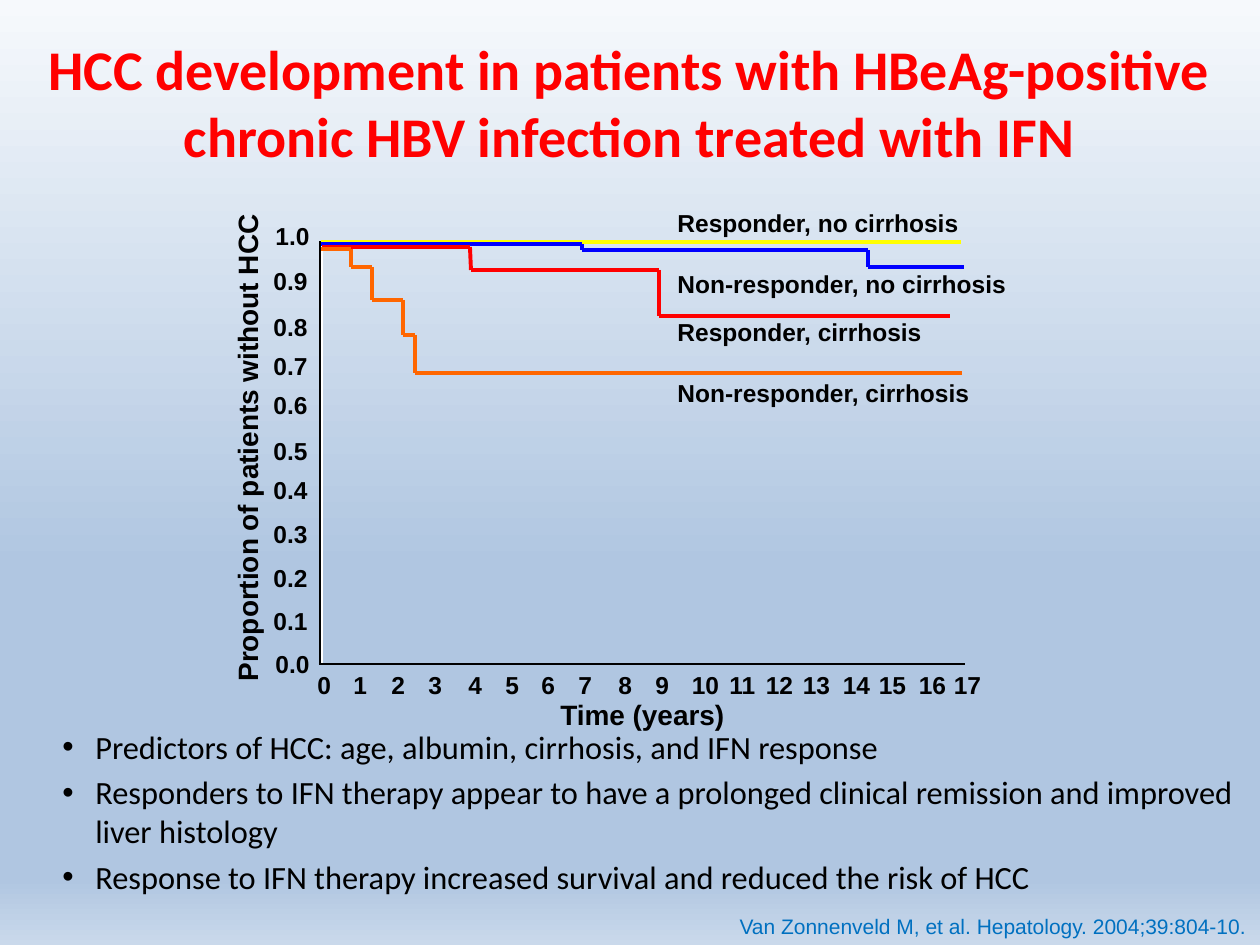
import itertools
from dataclasses import dataclass

import pptx
import pptx.dml.color
import pptx.enum.shapes
import pptx.enum.text
import pptx.oxml
import pptx.oxml.ns
import pptx.util

PX = 914400 / 126
ALIGN = pptx.enum.text.PP_ALIGN
NAMESPACE = pptx.oxml.ns.nsdecls("a")


@dataclass(frozen=True)
class Theme:
    heading_font: str = "Calibri"
    chart_font: str = "Arial"
    title: str = "FF0000"
    text: str = "000000"
    source: str = "0070C0"
    axis: str = "000000"
    axis_highlight: str = "FFFFFF"
    title_size: float = 32
    bullet_size: float = 18.5
    axis_title_size: float = 16
    label_size: float = 14
    source_size: float = 12
    axis_width: float = 0.75
    curve_width: float = 2.25
    background: tuple = ((0, "F6F9FC"), (60, "B0C6E1"), (93, "B0C6E1"), (100, "CAD9EB"))


THEME = Theme()

TITLE = "HCC development in patients with HBeAg-positive chronic HBV infection treated with IFN"
BULLETS = [
    "Predictors of HCC: age, albumin, cirrhosis, and IFN response",
    "Responders to IFN therapy appear to have a prolonged clinical remission and improved liver histology",
    "Response to IFN therapy increased survival and reduced the risk of HCC",
]
SOURCE = "Van Zonnenveld M, et al. Hepatology. 2004;39:804-10."

# Left edge of each year label, 0 to 17
YEAR_LEFTS = [305, 341, 379, 416, 456, 493, 529, 566, 606,
              643, 679, 716, 753, 790, 830, 866, 906, 941]
# Top edge of each proportion label, 0.0 to 1.0
PROPORTION_TOPS = [643, 600, 557, 513, 469, 430, 384, 345, 306, 260, 215]

# Label, label top, label width, colour, corners of the stepped curve
CURVES = [
    ("Responder, no cirrhosis", 202, 307, "FFFF00", [(321, 242), (961, 242)]),
    ("Non-responder, no cirrhosis", 263, 355, "0000FF",
     [(321, 244), (582, 244), (582, 250), (868, 250), (868, 267), (964, 267)]),
    ("Responder, cirrhosis", 311, 271, "FF0000",
     [(322, 247), (470, 247), (471, 270), (659, 270), (659, 316), (950, 316)]),
    ("Non-responder, cirrhosis", 372, 319, "FF6600",
     [(321, 249), (351, 249), (351, 267), (372, 267), (372, 300), (403, 300),
      (403, 335), (415, 335), (415, 373), (962, 373)]),
]
HIGHLIGHT_LINES = [((322, 241), (322, 664)), ((320, 664), (965, 664))]
AXIS_LINES = [((320, 241), (320, 663)), ((319, 664), (965, 664))]


def emu(pixels):
    return pptx.util.Emu(round(pixels * PX))


def add_text(slide, frame, lines, size, font=THEME.chart_font, color=THEME.text,
             bold=True, align=ALIGN.LEFT, wrap=False, bullet=False):
    box = slide.shapes.add_textbox(*map(emu, frame))
    box.text_frame.word_wrap = wrap
    for index, line in enumerate(lines):
        para = box.text_frame.paragraphs[0] if index == 0 else box.text_frame.add_paragraph()
        para.alignment = align
        if bullet:
            add_bullet(para)
            if index:
                para.space_before = pptx.util.Pt(0.2 * size)
        span = para.add_run()
        span.text = line
        span.font.name = font
        span.font.size = pptx.util.Pt(size)
        span.font.bold = bold
        span.font.color.rgb = pptx.dml.color.RGBColor.from_string(color)
    return box


def add_bullet(para):
    properties = para._p.get_or_add_pPr()
    properties.set("marL", str(emu(33)))
    properties.set("indent", str(emu(-33)))
    for mark in ('<a:buFont %s typeface="Arial"/>', '<a:buChar %s char="•"/>'):
        properties.append(pptx.oxml.parse_xml(mark % NAMESPACE))


def add_lines(slide, segments, color, width):
    for start, end in segments:
        line = slide.shapes.add_connector(
            pptx.enum.shapes.MSO_CONNECTOR.STRAIGHT, *map(emu, (*start, *end)))
        line.line.color.rgb = pptx.dml.color.RGBColor.from_string(color)
        line.line.width = pptx.util.Pt(width)
        line._element.spPr.append(pptx.oxml.parse_xml(f"<a:effectLst {NAMESPACE}/>"))


def set_background(slide):
    fill = slide.background.fill
    fill.gradient()
    fill.gradient_angle = 270
    stops = slide.element.xpath(".//p:bg//a:gsLst")[0]
    for stop in list(stops):
        stops.remove(stop)
    for percent, color in THEME.background:
        stops.append(pptx.oxml.parse_xml(
            f'<a:gs {NAMESPACE} pos="{percent * 1000}"><a:srgbClr val="{color}"/></a:gs>'))


def add_axis_labels(slide):
    for year, left in enumerate(YEAR_LEFTS):
        width, align = (39, ALIGN.LEFT) if year < 10 else (53, ALIGN.CENTER)
        add_text(slide, (left, 664, width, 43), [str(year)], THEME.label_size, align=align)
    for tenth, top in enumerate(PROPORTION_TOPS):
        left = 263 if tenth in (0, 10) else 261
        add_text(slide, (left, top, 59, 43), [f"{tenth / 10:.1f}"],
                 THEME.label_size, align=ALIGN.RIGHT)
    add_text(slide, (548, 691, 191, 47), ["Time (years)"], THEME.axis_title_size)
    axis_title = add_text(slide, (-2, 421, 499, 47),
                          ["Proportion of patients without HCC"], THEME.axis_title_size)
    axis_title.rotation = 270


def main():
    deck = pptx.Presentation()
    deck.slide_width, deck.slide_height = emu(1260), emu(945)
    page = deck.slides.add_slide(deck.slide_layouts[6])
    set_background(page)

    add_lines(page, HIGHLIGHT_LINES, THEME.axis_highlight, THEME.axis_width)
    add_axis_labels(page)
    for label, top, width, color, corners in CURVES:
        add_lines(page, itertools.pairwise(corners), color, THEME.curve_width)
        add_text(page, (665, top, width, 43), [label], THEME.label_size)

    add_text(page, (723, 907, 536, 38), [SOURCE], THEME.source_size,
             color=THEME.source, bold=False, align=ALIGN.RIGHT)
    title = add_text(page, (0, 8, 1259, 188), [TITLE], THEME.title_size,
                     font=THEME.heading_font, color=THEME.title,
                     align=ALIGN.CENTER, wrap=True)
    title.text_frame.vertical_anchor = pptx.enum.text.MSO_ANCHOR.MIDDLE
    add_text(page, (50, 721, 1196, 180), BULLETS, THEME.bullet_size,
             font=THEME.heading_font, bold=False, wrap=True, bullet=True)
    add_lines(page, AXIS_LINES, THEME.axis, THEME.axis_width)

    deck.save("out.pptx")


if __name__ == "__main__":
    main()
